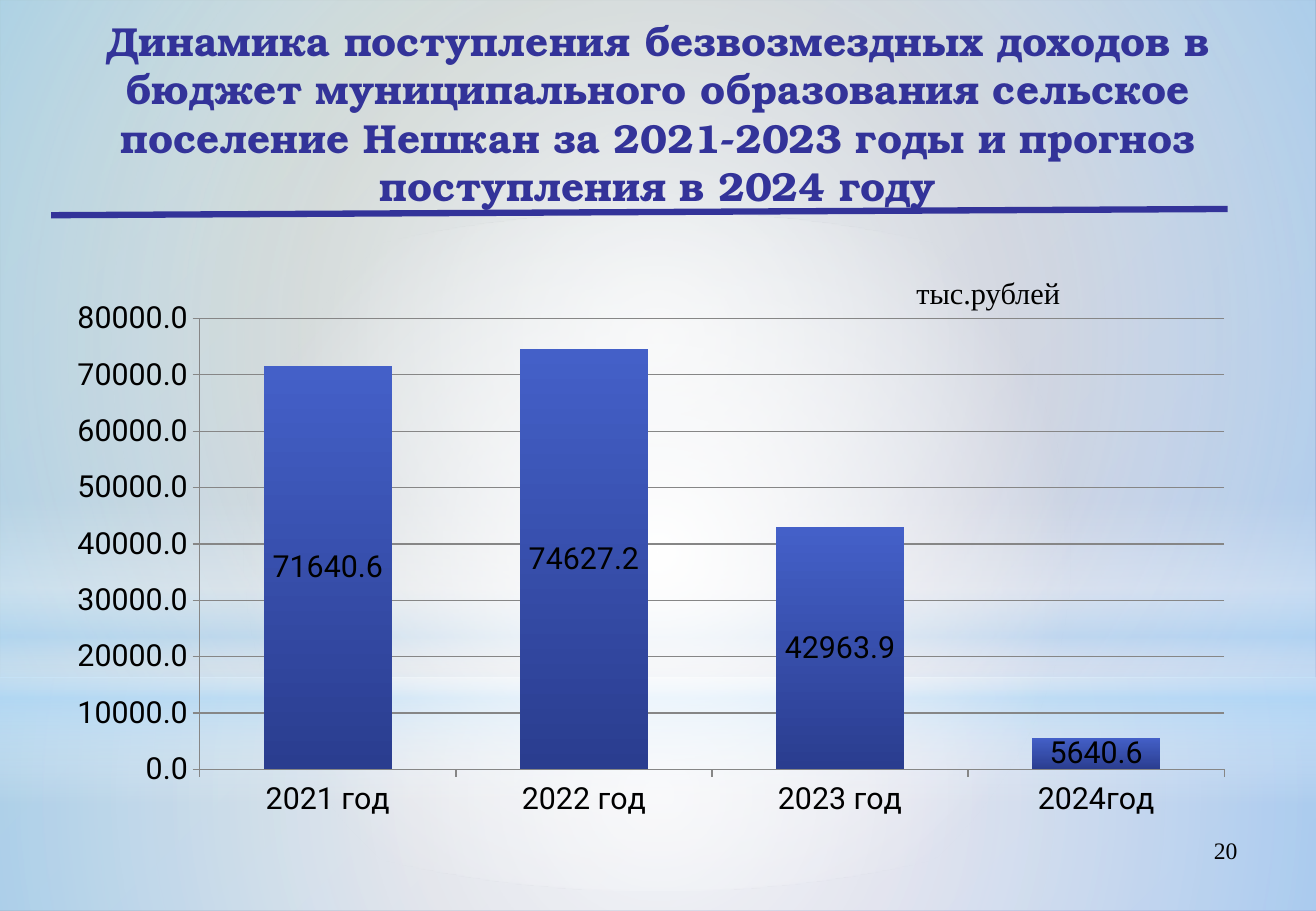
"""Build the slide on grant income of the Neshkan budget, 2021-2024."""
from lxml import etree
from pptx import Presentation, util as u
from pptx.chart import data
from pptx.dml.color import RGBColor
from pptx.enum import chart as ch, shapes, text
from pptx.oxml import parse_xml
from pptx.oxml.ns import nsdecls, qn

HUES = {"ink": "000000", "title": "333399", "white": "FFFFFF", "sky": "B4DCFA",
        "sage": "96AB94", "iris": "8488C4", "top": "4460C8", "base": "2A3D8F",
        "grid": "868686"}
WIDE, HIGH = 27.53, 19.05
SERIF = "Times New Roman"


def hue(name):
    """Return the named colour."""
    return RGBColor.from_string(HUES[name])


def label(words, box, size, face, tone, align, bold=False):
    """Add a wrapped text box with one paragraph."""
    frame = slide.shapes.add_textbox(*map(u.Cm, box)).text_frame
    frame.word_wrap = True
    para = frame.paragraphs[0]
    para.text = words
    para.alignment = align
    font = para.font
    font.size, font.name, font.bold = u.Pt(size), face, bold
    font.color.rgb = hue(tone)
    return frame


deck = Presentation()
deck.slide_width, deck.slide_height = u.Cm(WIDE), u.Cm(HIGH)
slide = deck.slides.add_slide(deck.slide_layouts[6])

back = slide.background.fill
back.gradient()
back.gradient_angle = 315
for stop, name in zip(back.gradient_stops, ("sage", "iris")):
    stop.color.rgb = hue(name)

ROUND = ('<a:path path="circle"><a:fillToRect l="50000" t="50000" '
         'r="50000" b="50000"/></a:path>')
DOWN = '<a:lin ang="5400000" scaled="0"/>'
RECT, OVAL = shapes.MSO_SHAPE.RECTANGLE, shapes.MSO_SHAPE.OVAL
veils = [
    (RECT, 14.17, 4.88, ROUND,
     [(0, "white", 91), (37, "white", 76), (100, "sky", 79)]),
    (RECT, 0, 14.17, ROUND,
     [(0, "white", 89), (48, "white", 62), (100, "sky", 79)]),
    (RECT, 10.46, 6.35, DOWN,
     [(0, "white", 0), (29, "white", 30), (45, "sky", 40),
      (55, "white", 26), (65, "sky", 60), (100, "white", 0)]),
    (OVAL, 4.45, 14.17, ROUND, [(0, "white", 100), (56, "white", 0)]),
]
for kind, top, high, way, stops in veils:
    veil = slide.shapes.add_shape(kind, 0, u.Cm(top), u.Cm(WIDE), u.Cm(high))
    veil.shadow.inherit = False
    veil.line.fill.background()
    veil.fill.background()
    marks = "".join(
        f'<a:gs pos="{pos * 1000}"><a:srgbClr val="{HUES[name]}">'
        f'<a:alpha val="{alpha * 1000}"/></a:srgbClr></a:gs>'
        for pos, name, alpha in stops)
    props = veil._element.spPr
    props.replace(props.find(qn("a:noFill")), parse_xml(
        f'<a:gradFill {nsdecls("a")} rotWithShape="1">'
        f'<a:gsLst>{marks}</a:gsLst>{way}</a:gradFill>'))

label("20", (19.71, 17.35, 6.43, 1.32), 14, SERIF, "ink", text.PP_ALIGN.RIGHT)
title = label(
    "Динамика поступления безвозмездных доходов в бюджет муниципального "
    "образования сельское поселение Нешкан за 2021-2023 годы и прогноз "
    "поступления в 2024 году",
    (0, 0.33, WIDE, 4.06), 24, "TeX Gyre Bonum", "title",
    text.PP_ALIGN.CENTER, True)
title.vertical_anchor = text.MSO_ANCHOR.MIDDLE

rule = slide.shapes.add_connector(
    shapes.MSO_CONNECTOR.STRAIGHT, u.Cm(1.07), u.Cm(4.5), u.Cm(25.68), u.Cm(4.37))
rule.line.color.rgb = hue("title")
rule.line.width = u.Pt(3.75)
etree.SubElement(rule._element.spPr, qn("a:effectLst"))

sums = data.CategoryChartData(number_format="0.0")
sums.categories = ["2021 год", "2022 год", "2023 год", "2024год"]
sums.add_series("Series 1", (71640.6, 74627.2, 42963.9, 5640.6))
chart = slide.shapes.add_chart(
    ch.XL_CHART_TYPE.COLUMN_STACKED, u.Cm(1.19), u.Cm(6.1), u.Cm(24.92),
    u.Cm(11.23), sums).chart
chart.has_legend = chart.has_title = False
chart.font.size, chart.font.name = u.Pt(18), "Roboto"
chart.font.color.rgb = hue("ink")

plot = chart.plots[0]
plot.gap_width, plot.overlap = 100, 100
plot.vary_by_categories = False
plot.has_data_labels = True
tags = plot.data_labels
tags.show_value = True
tags.number_format, tags.number_format_is_linked = "0.0", False
tags.position = ch.XL_LABEL_POSITION.CENTER
bars = plot.series[0].format.fill
bars.gradient()
bars.gradient_angle = 270
for stop, name in zip(bars.gradient_stops, ("top", "base")):
    stop.color.rgb = hue(name)

sums_axis = chart.value_axis
sums_axis.minimum_scale, sums_axis.maximum_scale = 0, 80000
sums_axis.major_unit = 10000
sums_axis.has_major_gridlines = True
sums_axis.tick_labels.number_format = "0.0"
sums_axis.tick_labels.number_format_is_linked = False
for axis in (chart.category_axis, sums_axis):
    axis.major_tick_mark = ch.XL_TICK_MARK.OUTSIDE
for part in (chart.category_axis, sums_axis, sums_axis.major_gridlines):
    part.format.line.color.rgb = hue("grid")
    part.format.line.width = u.Pt(0.75)

area = chart._chartSpace.chart.plotArea
for old in area.findall(qn("c:layout")):
    area.remove(old)
sides = "".join(f'<c:{key} val="{val}"/>' for key, val in (
    ("layoutTarget", "inner"), ("xMode", "edge"), ("yMode", "edge"),
    ("x", 0.12), ("y", 0.05), ("w", 0.86), ("h", 0.84)))
area.insert(0, parse_xml(
    f'<c:layout {nsdecls("c")}><c:manualLayout>{sides}</c:manualLayout></c:layout>'))

label("тыс.рублей", (18.92, 5.61, 3.56, 1.02), 18, SERIF, "ink", text.PP_ALIGN.LEFT)

deck.save("out.pptx")
